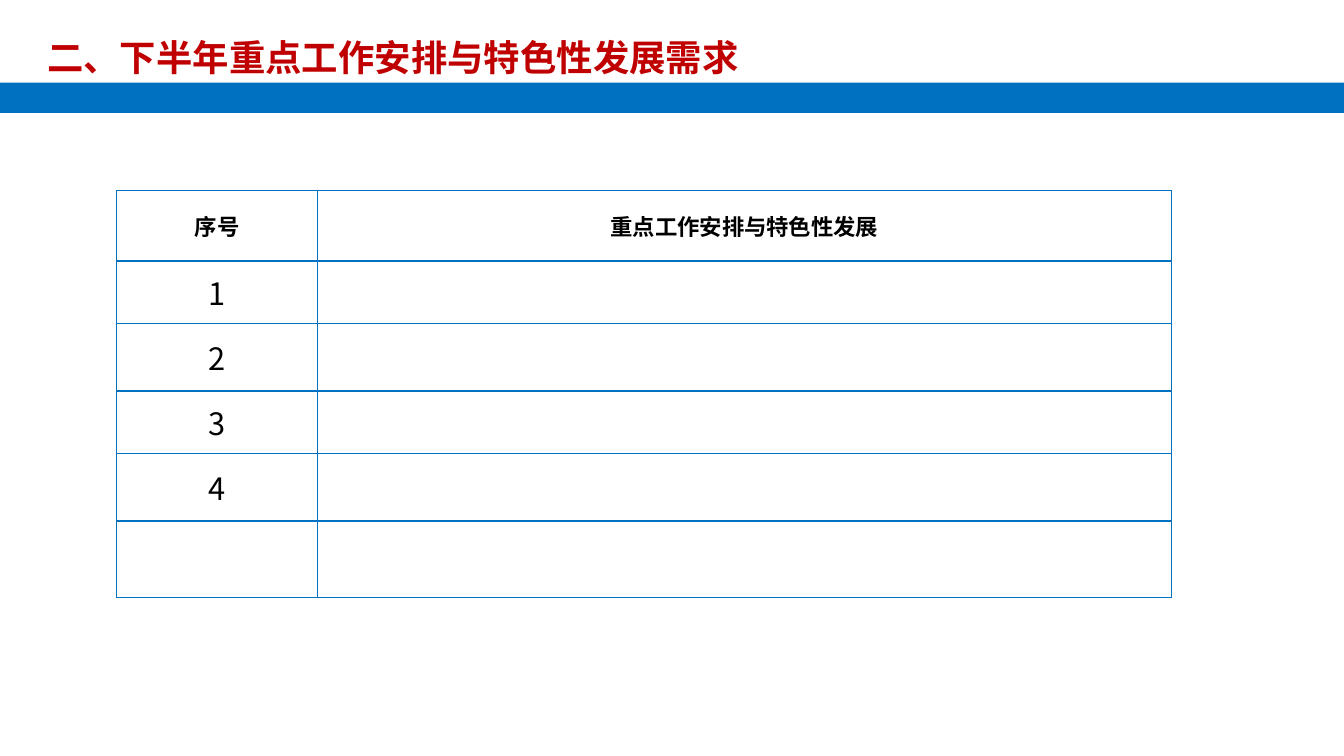
from lxml import etree
from pptx import Presentation
from pptx.dml.color import RGBColor
from pptx.enum import shapes, text
from pptx.oxml import ns
from pptx.util import Pt

PX = 9144  # 100 px to the inch
FONT = "Noto Sans CJK SC"
COLORS = {"title": "C00000", "blue": "0070C0", "text": "000000"}

TITLE = "二、下半年重点工作安排与特色性发展需求"
HEADINGS = ["序号", "重点工作安排与特色性发展"]
NUMBERS = ["1", "2", "3", "4", ""]
COLUMN_WIDTHS = [199, 848]
ROW_HEIGHTS = [70, 62, 67, 62, 67, 76]


def emu(*lengths):
    return [length * PX for length in lengths]


def write(frame, words, size, color, bold):
    frame.text = words
    para = frame.paragraphs[0]
    for span in para.runs:
        span.font.size = Pt(size)
        span.font.bold = bold
        span.font.name = FONT
        span.font.color.rgb = RGBColor.from_string(COLORS[color])
        east_asian = etree.SubElement(span.font._element, ns.qn("a:ea"))
        east_asian.set("typeface", FONT)
    return para


def add_borders(cell, color):
    properties = cell._tc.get_or_add_tcPr()
    for position, side in enumerate(("a:lnL", "a:lnR", "a:lnT", "a:lnB")):
        line = etree.Element(ns.qn(side), w=str(Pt(1)))
        fill = etree.SubElement(line, ns.qn("a:solidFill"))
        etree.SubElement(fill, ns.qn("a:srgbClr"), val=COLORS[color])
        properties.insert(position, line)


def add_header(page, left, top, width):
    # Title
    box = page.shapes.add_textbox(*emu(left + 37, top, 713, 54))
    box.text_frame.word_wrap = False
    write(box.text_frame, TITLE, 26, "title", True)

    # Blue band across the page
    band = page.shapes.add_shape(
        shapes.MSO_SHAPE.RECTANGLE, *emu(left, top + 52, width, 30))
    band.shadow.inherit = False
    band.fill.solid()
    band.fill.fore_color.rgb = RGBColor.from_string(COLORS["blue"])
    band.line.fill.background()


def add_work_table(page, left, top):
    rows = [HEADINGS] + [[number, ""] for number in NUMBERS]
    table = page.shapes.add_table(
        len(rows), len(HEADINGS),
        *emu(left, top, sum(COLUMN_WIDTHS), sum(ROW_HEIGHTS))).table
    table.first_row = False
    table.horz_banding = False
    for column, width in zip(table.columns, COLUMN_WIDTHS):
        column.width = width * PX
    for row, height in zip(table.rows, ROW_HEIGHTS):
        row.height = height * PX

    # Cells: bold headings, larger numbers
    for row_index, words_in_row in enumerate(rows):
        heading = row_index == 0
        for column_index, words in enumerate(words_in_row):
            cell = table.cell(row_index, column_index)
            cell.fill.background()
            cell.vertical_anchor = text.MSO_ANCHOR.MIDDLE
            para = write(cell.text_frame, words, 16 if heading else 22,
                         "text", heading)
            para.alignment = text.PP_ALIGN.CENTER
            add_borders(cell, "blue")


def main():
    deck = Presentation()
    deck.slide_width, deck.slide_height = emu(1334, 750)
    page = deck.slides.add_slide(deck.slide_layouts[6])
    add_header(page, 0, 30, 1334)
    add_work_table(page, 116, 189)
    deck.save("out.pptx")


if __name__ == "__main__":
    main()
